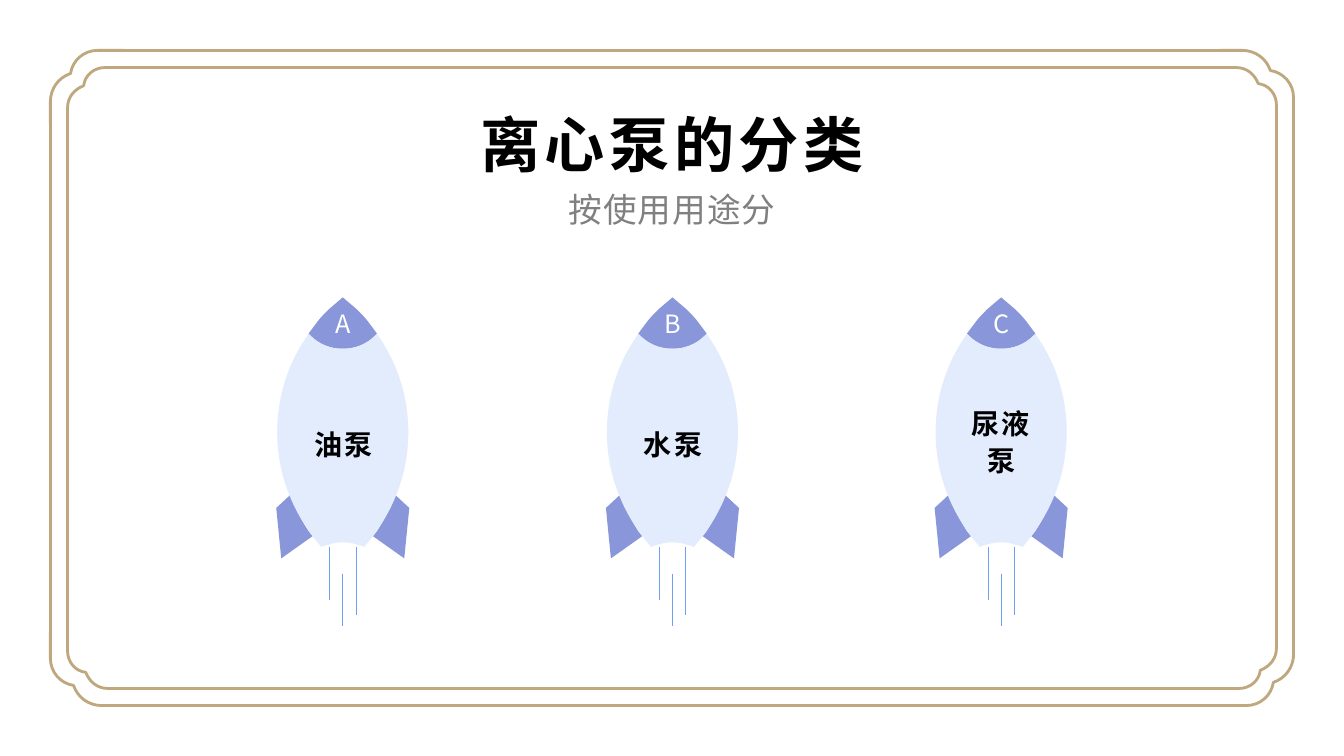
from dataclasses import dataclass
from typing import Callable

from lxml import etree
from pptx import Presentation
from pptx import util as u
from pptx.dml.color import RGBColor
from pptx.enum import shapes, text
from pptx.oxml.ns import qn

FONT = "Noto Sans CJK SC"
GOLD, PURPLE, PALE, BLUE = "BFA77E", "8997DA", "E2ECFD", "6E9FF5"
WIDTH, HEIGHT = 13.33, 7.5
Point = tuple[float, float]


@dataclass
class Outline:
    points: list[Point]
    sizes: list[int]

    def moved(self, rule: Callable[[float, float], Point]) -> "Outline":
        return Outline([rule(x, y) for x, y in self.points], self.sizes)

    def with_mirror(self) -> "Outline":
        back = [(-x, y) for x, y in reversed(self.points)]
        return Outline(self.points + back[1:], self.sizes + self.sizes[::-1])


@dataclass
class Frame:
    inset: float
    corner: Outline
    side_top: float
    side_bottom: float


@dataclass
class Rocket:
    letter: str
    label: str
    center: float
    line_spacing: float


def outline(*segments: tuple[float, ...]) -> Outline:
    points = [seg[i:i + 2] for seg in segments for i in range(0, len(seg), 2)]
    return Outline(points, [len(seg) // 2 for seg in segments[1:]])


FRAMES = [
    Frame(0.5, outline((1.23, 0.5), (0.97, 0.5), (0.83, 0.5, 0.72, 0.6, 0.7, 0.73),
                       (0.58, 0.77, 0.5, 0.88, 0.5, 1.01), (0.5, 1.23)), 1.08, 6.53),
    Frame(0.67, outline((1.25, 0.67), (1.04, 0.67), (0.93, 0.67, 0.84, 0.75, 0.83, 0.85),
                        (0.73, 0.89, 0.67, 0.97, 0.67, 1.07), (0.67, 1.25)), 1.2, 6.37),
]
ROCKETS = [
    Rocket("A", "油泵", 3.4, 1.2),
    Rocket("B", "水泵", 6.67, 1.2),
    Rocket("C", "尿液泵", 9.93, 1.1),
]
FIN = outline((0.52, 4.91), (0.48, 5.01), (0.44, 5.1, 0.39, 5.19, 0.34, 5.27),
              (0.3, 5.32), (0.61, 5.54), (0.66, 5.04))
NOSE = outline((0, 2.95), (0.14, 3.07), (0.18, 3.11, 0.22, 3.15, 0.25, 3.19),
               (0.34, 3.31), (0.32, 3.33),
               (0.24, 3.41, 0.13, 3.46, 0, 3.46)).with_mirror()
BODY = outline((0, 3.46), (0.13, 3.46, 0.24, 3.41, 0.32, 3.33), (0.34, 3.31),
               (0.35, 3.33), (0.54, 3.6, 0.65, 3.93, 0.65, 4.29),
               (0.65, 4.7, 0.5, 5.08, 0.25, 5.38), (0.21, 5.43), (0.2, 5.42),
               (0.14, 5.4, 0.07, 5.38, 0, 5.38)).with_mirror()
TRAILS = [(-0.13, 5.43, 5.95), (0, 5.69, 6.21), (0.13, 5.43, 6.1)]


def rgb(color: str) -> RGBColor:
    return RGBColor.from_string(color)


def curve(sp, sizes: list[int]) -> None:
    steps = iter(list(sp._element.iter(qn("a:lnTo"))))
    for size in sizes:
        group = [next(steps) for _ in range(size)]
        if size == 3:
            bezier = etree.Element(qn("a:cubicBezTo"))
            group[0].addprevious(bezier)
            for step in group:
                bezier.append(step[0])
                step.getparent().remove(step)


def draw_outline(s, shape: Outline, fill: str = "", line: str = ""):
    pts = [(u.Inches(x), u.Inches(y)) for x, y in shape.points]
    builder = s.shapes.build_freeform(*pts[0])
    builder.add_line_segments(pts[1:], close=bool(fill))
    sp = builder.convert_to_shape()
    curve(sp, shape.sizes)
    sp.shadow.inherit = False
    if fill:
        sp.fill.solid()
        sp.fill.fore_color.rgb = rgb(fill)
    else:
        sp.fill.background()
    if line:
        sp.line.color.rgb = rgb(line)
        sp.line.width = u.Pt(2)
    else:
        sp.line.fill.background()
    return sp


def draw_line(s, start: Point, end: Point, color: str, width: float) -> None:
    ends = [u.Inches(v) for v in (*start, *end)]
    line = s.shapes.add_connector(shapes.MSO_CONNECTOR.STRAIGHT, *ends)
    line.line.color.rgb = rgb(color)
    line.line.width = u.Pt(width)
    etree.SubElement(line._element.spPr, qn("a:effectLst"))


def write(sp, words: str, *, size: float, color: str, bold: bool = False,
          spacing: float = 0, line_spacing: float = 1.0,
          anchor=text.MSO_ANCHOR.MIDDLE, insets: Point = (0.1, 0.05)) -> None:
    tf = sp.text_frame
    tf.word_wrap = True
    tf.auto_size = text.MSO_AUTO_SIZE.NONE
    tf.vertical_anchor = anchor
    tf.margin_left = tf.margin_right = u.Inches(insets[0])
    tf.margin_top = tf.margin_bottom = u.Inches(insets[1])
    p = tf.paragraphs[0]
    p.alignment = text.PP_ALIGN.CENTER
    p.line_spacing = line_spacing
    p.space_before = u.Pt(0)
    r = p.add_run()
    r.text = words
    r.font.size = u.Pt(size)
    r.font.bold = bold
    r.font.color.rgb = rgb(color)
    r.font.name = FONT
    rpr = r._r.get_or_add_rPr()
    rpr.set("spc", str(round(spacing * 100)))
    etree.SubElement(rpr, qn("a:ea")).set("typeface", FONT)


def place(sp, left: float, top: float, width: float, height: float) -> None:
    sp.left, sp.top = u.Inches(left), u.Inches(top)
    sp.width, sp.height = u.Inches(width), u.Inches(height)


def draw_frame(s, frame: Frame) -> None:
    turns: list[Callable[[float, float], Point]] = [
        lambda x, y: (x, y),
        lambda x, y: (WIDTH - y, x),
        lambda x, y: (WIDTH - x, HEIGHT - y),
        lambda x, y: (y, HEIGHT - x),
    ]
    for turn in turns:
        draw_outline(s, frame.corner.moved(turn), line=GOLD)
    for y in (frame.inset, HEIGHT - frame.inset):
        draw_line(s, (1.17, y), (12.17, y), GOLD, 2)
    for x in (frame.inset, WIDTH - frame.inset):
        draw_line(s, (x, frame.side_top), (x, frame.side_bottom), GOLD, 2)


def draw_rocket(s, rocket: Rocket) -> None:
    cx = rocket.center
    for side in (1, -1):
        draw_outline(s, FIN.moved(lambda x, y: (cx + side * x, y)), fill=PURPLE)
    tip = draw_outline(s, NOSE.moved(lambda x, y: (cx + x, y)), fill=PURPLE)
    write(tip, rocket.letter, size=18, color="FFFFFF")
    draw_outline(s, BODY.moved(lambda x, y: (cx + x, y)), fill=PALE)
    for dx, top, bottom in TRAILS:
        draw_line(s, (cx + dx, top), (cx + dx, bottom), BLUE, 0.5)
    box = [u.Inches(v) for v in (cx - 0.45, 3.91, 0.91, 0.92)]
    write(s.shapes.add_textbox(*box), rocket.label, size=20, color="000000",
          bold=True, spacing=1.5, line_spacing=rocket.line_spacing)


def main() -> None:
    prs = Presentation()
    prs.slide_width, prs.slide_height = u.Inches(WIDTH), u.Inches(HEIGHT)
    s = prs.slides.add_slide(prs.slide_layouts[0])
    title, subtitle = s.placeholders
    place(title, 1.83, 1, 9.67, 0.81)
    write(title, "离心泵的分类", size=43, color="000000", bold=True, spacing=3.2,
          anchor=text.MSO_ANCHOR.BOTTOM, insets=(0.07, 0.03))
    place(subtitle, 1.83, 1.84, 9.67, 0.5)
    write(subtitle, "按使用用途分", size=24, color="808080", spacing=0.8,
          anchor=text.MSO_ANCHOR.TOP, insets=(0.07, 0.03))
    for frame in FRAMES:
        draw_frame(s, frame)
    for rocket in ROCKETS:
        draw_rocket(s, rocket)
    prs.save("out.pptx")


if __name__ == "__main__":
    main()
